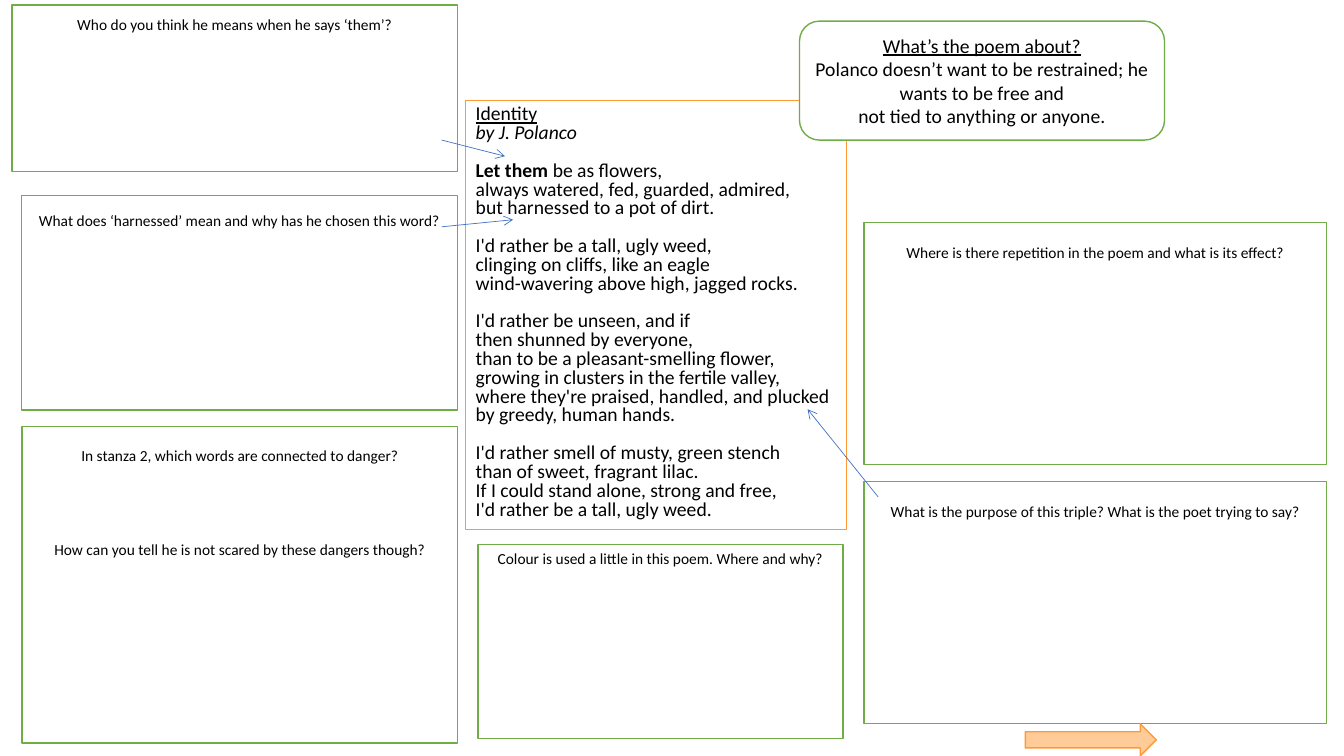
"""Build a poem annotation worksheet with question boxes around the poem."""
from lxml import etree
from pptx import Presentation, util as u
from pptx.dml.color import RGBColor
from pptx.enum import shapes, text
from pptx.oxml.ns import qn

THEME = dict(font="Calibri", ink="000000", paper="FFFFFF", green="70AD47",
             orange="FF9933", peach="FFCC99", blue="4472C4",
             body=u.Pt(14), question=u.Pt(11), stanza_gap=u.Pt(13.5), question_gap=u.Pt(53.7))

prs = Presentation()
prs.slide_width, prs.slide_height = u.Inches(13.33), u.Inches(7.5)
COL, ROW = prs.slide_width / 100, prs.slide_height / 100
s = prs.slides.add_slide(prs.slide_layouts[6])


def add_box(kind, x, y, w, h, fill, line, width=1):
    sp = s.shapes.add_shape(kind, int(x * COL), int(y * ROW), int(w * COL), int(h * ROW))
    sp.shadow.inherit = False
    sp.fill.solid()
    sp.fill.fore_color.rgb = RGBColor.from_string(THEME[fill])
    sp.line.color.rgb = RGBColor.from_string(THEME[line])
    sp.line.width = u.Pt(width)
    sp.text_frame.word_wrap = True
    return sp


def add_text(p, lines, size, **formats):
    for i, line in enumerate(lines.split("\n")):
        if i:
            p.add_line_break()
        if line:
            r = p.add_run()
            r.text = line
            for name, value in dict(name=THEME["font"], size=THEME[size], **formats).items():
                setattr(r.font, name, value)
            r.font.color.rgb = RGBColor.from_string(THEME["ink"])


stanzas = [
    [("Identity\n", {"underline": True}), ("by J. Polanco", {"italic": True})],
    [("Let them ", {"bold": True}), ("""be as flowers,
always watered, fed, guarded, admired,
but harnessed to a pot of dirt.""", {})],
    [("""I'd rather be a tall, ugly weed,
clinging on cliffs, like an eagle
wind-wavering above high, jagged rocks.""", {})],
    [("""I'd rather be unseen, and if
then shunned by everyone,
than to be a pleasant-smelling flower,
growing in clusters in the fertile valley,
where they're praised, handled, and plucked
by greedy, human hands.""", {})],
    [("""I'd rather smell of musty, green stench
than of sweet, fragrant lilac.
If I could stand alone, strong and free,
I'd rather be a tall, ugly weed.""", {})],
]
tf = add_box(shapes.MSO_SHAPE.RECTANGLE, 34.66, 13.33, 28.36, 56.67, "paper", "orange", 0.75).text_frame
tf.vertical_anchor = text.MSO_ANCHOR.TOP
for i, stanza in enumerate(stanzas):
    p = tf.add_paragraph() if i else tf.paragraphs[0]
    p.alignment, p.line_spacing = text.PP_ALIGN.LEFT, 0.8
    if i:
        p.space_before = THEME["stanza_gap"]
    for words, formats in stanza:
        add_text(p, words, "body", **formats)

summary = [
    ("What’s the poem about?", {"underline": True}),
    ("Polanco doesn’t want to be restrained; he wants to be free and", {}),
    ("not tied to anything or anyone.", {}),
]
tf = add_box(shapes.MSO_SHAPE.ROUNDED_RECTANGLE, 59.49, 2.8, 27.16, 15.73, "paper", "green").text_frame
tf.vertical_anchor = text.MSO_ANCHOR.MIDDLE
for i, (words, formats) in enumerate(summary):
    p = tf.add_paragraph() if i else tf.paragraphs[0]
    p.alignment = text.PP_ALIGN.CENTER
    add_text(p, words, "body", **formats)

question_boxes = [
    ((0.9, 0.67, 33.16, 22), 1.27, ["Who do you think he means when he says ‘them’?"]),
    ((1.58, 25.87, 32.48, 28.4), 2, ["What does ‘harnessed’ mean and why has he chosen this word?"]),
    ((1.65, 56.4, 32.41, 41.87), 2.67, ["In stanza 2, which words are connected to danger?",
                                        "How can you tell he is not scared by these dangers though?"]),
    ((64.29, 29.47, 34.43, 32), 2.67, ["Where is there repetition in the poem and what is its effect?"]),
    ((64.29, 63.73, 34.43, 32), 2.67, ["What is the purpose of this triple? What is the poet trying to say?"]),
    ((35.56, 72, 27.16, 25.73), 0.67, ["Colour is used a little in this poem. Where and why?"]),
]
for place, inset, questions in question_boxes:
    tf = add_box(shapes.MSO_SHAPE.RECTANGLE, *place, "paper", "green").text_frame
    tf.vertical_anchor, tf.margin_top = text.MSO_ANCHOR.TOP, int(inset * ROW)
    for i, question in enumerate(questions):
        p = tf.add_paragraph() if i else tf.paragraphs[0]
        p.alignment = text.PP_ALIGN.CENTER
        if i:
            p.space_before = THEME["question_gap"]
        add_text(p, question, "question")

pointers = [(32.86, 18.53, 37.58, 20.67), (32.86, 30, 38.18, 29.07), (65.34, 65.73, 60.09, 54.13)]
for x1, y1, x2, y2 in pointers:
    cx = s.shapes.add_connector(shapes.MSO_CONNECTOR.STRAIGHT, int(x1 * COL), int(y1 * ROW),
                                int(x2 * COL), int(y2 * ROW))
    cx.line.color.rgb = RGBColor.from_string(THEME["blue"])
    cx.line.width = u.Pt(0.5)
    etree.SubElement(cx.line._get_or_add_ln(), qn("a:tailEnd"), type="arrow")
    etree.SubElement(cx._element.spPr, qn("a:effectLst"))

add_box(shapes.MSO_SHAPE.RIGHT_ARROW, 76.29, 95.73, 9.75, 4.27, "peach", "orange")

prs.save("out.pptx")
